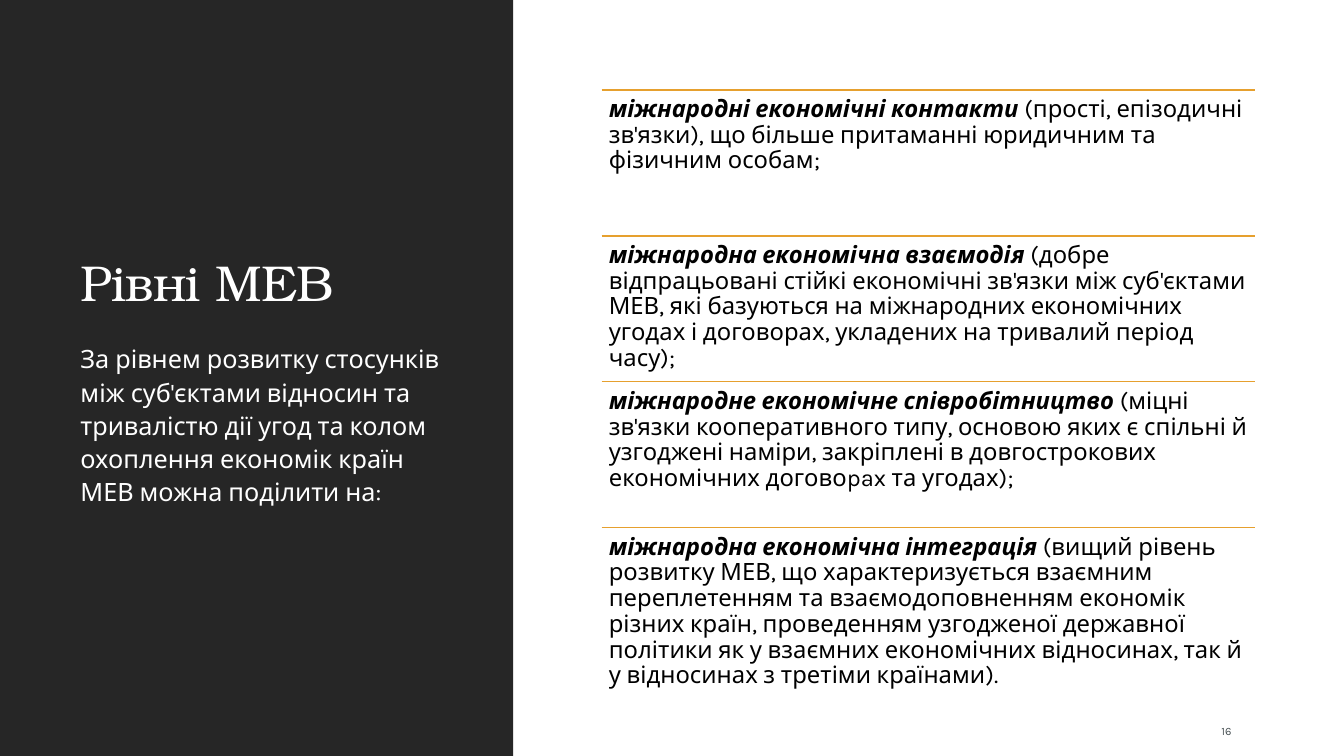
from lxml import etree
from pptx import Presentation
from pptx import util as u
from pptx.dml.color import RGBColor
from pptx.enum import shapes, text
from pptx.oxml.ns import qn

TITLE = "Рівні МЕВ"
INTRO = ("За рівнем розвитку стосунків між суб'єктами відносин та тривалістю дії угод "
         "та колом охоплення економік країн МЕВ можна поділити на:")
LEVELS = [
    ("міжнародні економічні контакти",
     " (прості, епізодичні зв'язки), що більше притаманні юридичним та фізичним особам;"),
    ("міжнародна економічна взаємодія",
     " (добре відпрацьовані стійкі економічні зв'язки між суб'єктами МЕВ, які базуються "
     "на міжнародних економічних угодах і договорах, укладених на тривалий період часу);"),
    ("міжнародне економічне співробітництво",
     " (міцні зв'язки кооперативного типу, основою яких є спільні й узгоджені наміри, "
     "закріплені в довгострокових економічних договоpax та угодах);"),
    ("міжнародна економічна інтеграція",
     " (вищий рівень розвитку МЕВ, що характеризується взаємним переплетенням та "
     "взаємодоповненням економік різних країн, проведенням узгодженої державної політики "
     "як у взаємних економічних відносинах, так й у відносинах з третіми країнами)."),
]
PAGE_NUMBER = "16"

BODY_FONT, TITLE_FONT = "Karla", "TeX Gyre Bonum"
PANEL, RULE, WHITE, BLACK, GREY = "262626", "E6A02E", "FFFFFF", "000000", "4A5356"
LEFT, COLUMN = 50.4, 277.2
LEVEL_LEFT, LEVEL_TOP, LEVEL_WIDTH, LEVEL_STEP = 429.8, 64.1, 466.6, 104.25


def color(value):
    return RGBColor.from_string(value)


def add_text(page, area, spans, paragraph=None, inset=(7.2, 3.6),
             anchor=text.MSO_ANCHOR.TOP):
    box = page.shapes.add_textbox(*map(u.Pt, area))
    frame = box.text_frame
    across, down = map(u.Pt, inset)
    settings = dict(word_wrap=True, vertical_anchor=anchor, margin_left=across,
                    margin_right=across, margin_top=down, margin_bottom=down)
    for name, value in settings.items():
        setattr(frame, name, value)
    para = frame.paragraphs[0]
    for name, value in (paragraph or {}).items():
        setattr(para, name, value)
    for words, size, font, ink, strong in spans:
        span = para.add_run()
        span.text = words
        style = dict(size=u.Pt(size), name=font, bold=strong, italic=strong)
        for name, value in style.items():
            setattr(span.font, name, value)
        span.font.color.rgb = color(ink)
    return para


def add_rule(page, top):
    rule = page.shapes.add_connector(
        shapes.MSO_CONNECTOR.STRAIGHT, u.Pt(LEVEL_LEFT), u.Pt(top),
        u.Pt(LEVEL_LEFT + LEVEL_WIDTH), u.Pt(top))
    rule.line.color.rgb = color(RULE)
    rule.line.width = u.Pt(1.25)
    etree.SubElement(rule._element.spPr, qn("a:effectLst"))


def main():
    deck = Presentation()
    deck.slide_width, deck.slide_height = u.Pt(960), u.Pt(540)
    page = deck.slides.add_slide(deck.slide_layouts[6])

    panel = page.shapes.add_shape(shapes.MSO_SHAPE.RECTANGLE, 0, 0,
                                  u.Pt(366.5), deck.slide_height)
    panel.shadow.inherit = False
    panel.fill.solid()
    panel.fill.fore_color.rgb = color(PANEL)
    panel.line.fill.background()

    title = add_text(page, (LEFT, 61.9, COLUMN, 164.9),
                     [(TITLE, 36, TITLE_FONT, WHITE, False)],
                     dict(line_spacing=0.9), anchor=text.MSO_ANCHOR.BOTTOM)
    title.runs[0].font._element.set("spc", "-50")
    add_text(page, (LEFT, 239.8, COLUMN, 241.2),
             [(INTRO, 18, BODY_FONT, WHITE, False)],
             dict(line_spacing=1.1, space_after=u.Pt(2)))

    for index, (term, meaning) in enumerate(LEVELS):
        top = LEVEL_TOP + index * LEVEL_STEP
        add_rule(page, top)
        add_text(page, (LEVEL_LEFT, top, LEVEL_WIDTH, LEVEL_STEP),
                 [(term, 17, BODY_FONT, BLACK, True),
                  (meaning, 17, BODY_FONT, BLACK, False)],
                 dict(line_spacing=0.9), inset=(5.1, 5.1))

    add_text(page, (865.4, 507.6, 61.2, 28.8),
             [(PAGE_NUMBER, 8, BODY_FONT, GREY, False)],
             anchor=text.MSO_ANCHOR.MIDDLE)
    deck.save("out.pptx")


if __name__ == "__main__":
    main()
